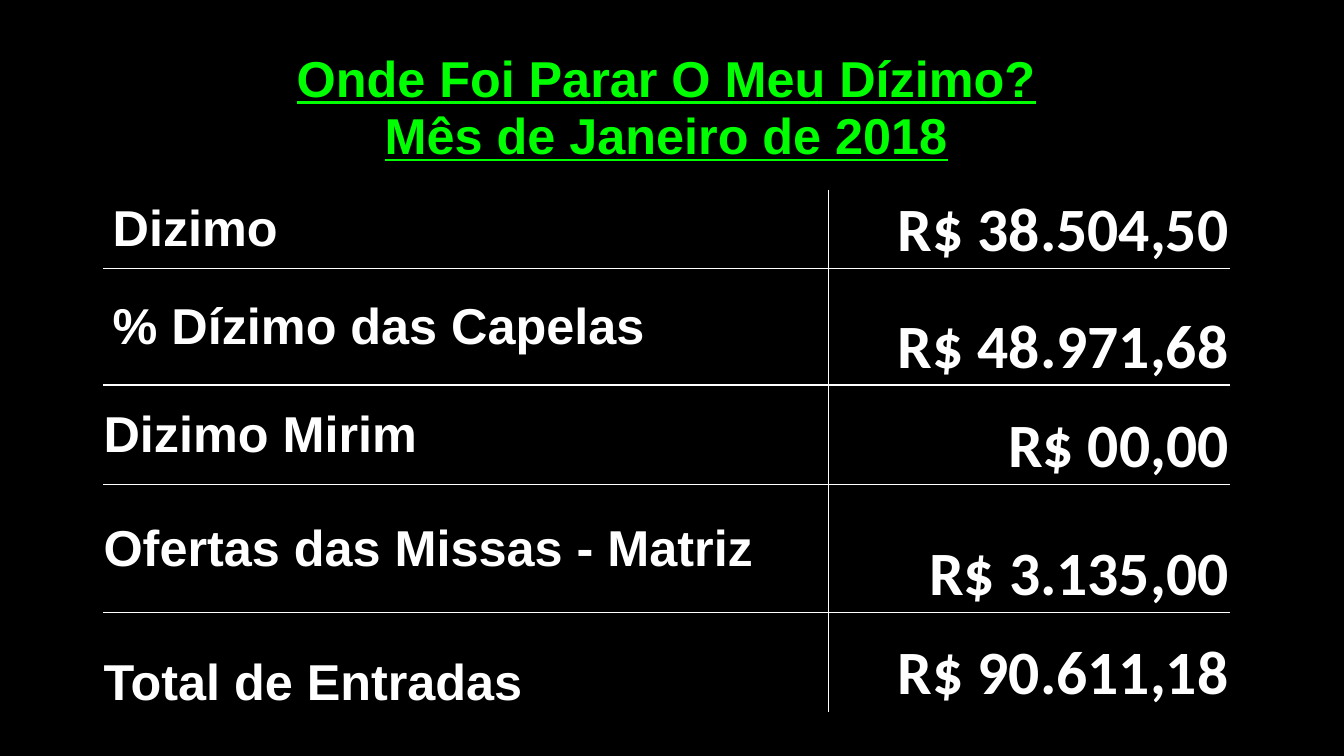
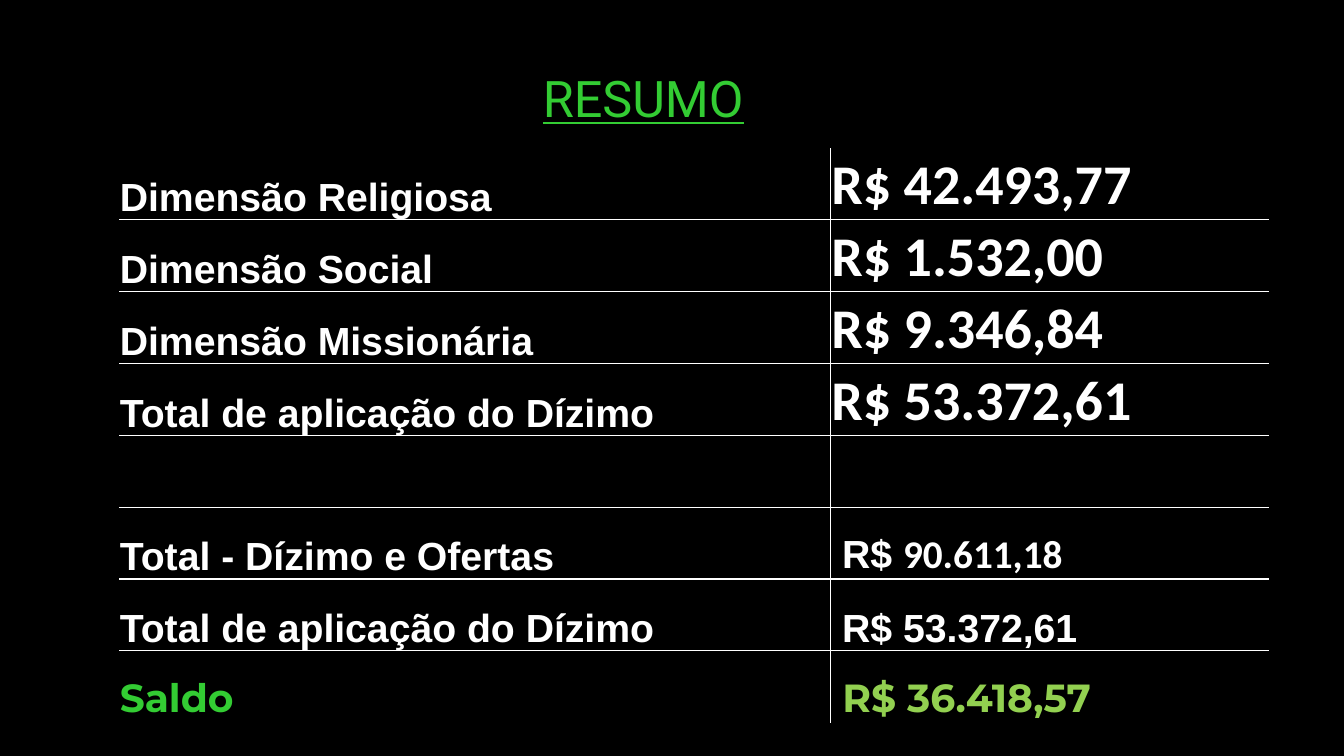
import pptx
import pptx.util
import pptx.dml.color
import pptx.enum.text
from lxml import etree
import pptx.oxml.ns

Cm, Pt = pptx.util.Cm, pptx.util.Pt
ALIGN = pptx.enum.text.PP_ALIGN
ANCHOR = pptx.enum.text.MSO_ANCHOR

# Shared colours and text formats
BLACK, WHITE = "000000", "FFFFFF"
LIME, GREEN, OLIVE = "00FF00", "33CC33", "92D050"
THIN, PAD = 0.02, 0.25


def style(size, name, hue=WHITE, bold=True, underline=False):
    return {"size": Pt(size), "name": name, "color": hue,
            "bold": bold, "underline": underline}


HEAD = style(36, "Arial", LIME, underline=True)
LABEL = style(36, "Arial")
MONEY = style(44, "Calibri")
ITEM = style(28, "Arial")
SUM = style(40, "Calibri")


def paint(target, hue):
    """Give a fill or a font colour from a hex string."""
    target.rgb = pptx.dml.color.RGBColor.from_string(hue)


def write(para, text, form):
    run = para.add_run()
    run.text = text
    for key, value in form.items():
        if key == "color":
            paint(run.font.color, value)
        else:
            setattr(run.font, key, value)


# Slide parts
def add_title(slide, text, box, form):
    title = slide.shapes.title
    for key, value in zip(("left", "top", "width", "height"), box):
        setattr(title, key, Cm(value))
    frame = title.text_frame
    frame.word_wrap = True
    frame.auto_size = pptx.enum.text.MSO_AUTO_SIZE.NONE
    frame.vertical_anchor = ANCHOR.TOP
    para = frame.paragraphs[0]
    para.alignment = ALIGN.CENTER
    write(para, text, form)


def add_edge(cell, side, shown):
    """Draw one cell border, or switch it off."""
    props = cell._tc.get_or_add_tcPr()
    line = etree.SubElement(props, pptx.oxml.ns.qn("a:ln" + side), w=str(Pt(1)))
    if shown:
        fill = etree.SubElement(line, pptx.oxml.ns.qn("a:solidFill"))
        etree.SubElement(fill, pptx.oxml.ns.qn("a:srgbClr"), val=WHITE)
    else:
        etree.SubElement(line, pptx.oxml.ns.qn("a:noFill"))


def fill_cell(cell, runs, left=THIN, anchor=ANCHOR.BOTTOM, align=ALIGN.LEFT):
    look = {"margin_left": Cm(left), "margin_top": Cm(THIN),
            "margin_right": Cm(THIN), "margin_bottom": 0,
            "vertical_anchor": anchor}
    for key, value in look.items():
        setattr(cell, key, value)
    para = cell.text_frame.paragraphs[0]
    para.alignment = align
    for text, form in runs:
        write(para, text, form)


def add_grid(slide, left, top, widths, heights, rows, ruled=True):
    """Add a table that has inner rules at most."""
    shape = slide.shapes.add_table(
        len(rows), len(widths), Cm(left), Cm(top),
        Cm(sum(widths)), Cm(sum(heights)))
    table = shape.table
    table.first_row = table.horz_banding = False
    for col, width in zip(table.columns, widths):
        col.width = Cm(width)
    for r, row in enumerate(rows):
        table.rows[r].height = Cm(heights[r])
        for c, spec in enumerate(row):
            cell = table.cell(r, c)
            edges = {"L": c > 0, "R": c < len(widths) - 1,
                     "T": r > 0, "B": r < len(rows) - 1}
            for side, inner in edges.items():
                add_edge(cell, side, ruled and inner)
            cell.fill.background()
            fill_cell(cell, **spec)


def entry(text, form, **look):
    return {"runs": [(text, form)], **look}


# Slides
def add_income(slide):
    mid, low = ANCHOR.MIDDLE, ANCHOR.BOTTOM
    data = [("Dizimo", "R$ 38.504,50", PAD, mid),
            ("% Dízimo das Capelas", "R$ 48.971,68", PAD, mid),
            ("Dizimo Mirim", "R$ 00,00", THIN, mid),
            ("Ofertas das Missas - Matriz", "R$ 3.135,00", THIN, mid),
            ("Total de Entradas", "R$ 90.611,18", THIN, low)]
    rows = [(entry(name, LABEL, left=left, anchor=anchor),
             entry(value, MONEY, align=ALIGN.RIGHT))
            for name, value, left, anchor in data]
    add_grid(slide, 2.59, 4.78, (18.29, 10.11),
             (1.98, 2.94, 2.5, 3.23, 2.5), rows)
    lines = ["Onde Foi Parar O Meu Dízimo?", "Mês de Janeiro de 2018"]
    add_grid(slide, 6.12, 1.12, (21.34,), (1.6, 0.61),
             [(entry(line, HEAD, align=ALIGN.CENTER),) for line in lines],
             ruled=False)


def add_summary(slide):
    costs = [("Dimensão Religiosa", "R$ 42.493,77"),
             ("Dimensão Social", "R$ 1.532,00"),
             ("Dimensão Missionária", "R$ 9.346,84"),
             ("Total de aplicação do Dízimo", "R$ 53.372,61")]
    rows = [(entry(name, ITEM), entry(value, SUM)) for name, value in costs]
    rows += [
        ({"runs": []}, {"runs": []}),
        (entry("Total - Dízimo e Ofertas", ITEM),
         {"runs": [(" R$ ", ITEM), ("90.611,18", style(28, "Calibri"))]}),
        (entry("Total de aplicação do Dízimo", ITEM),
         entry(" R$ 53.372,61", ITEM)),
        (entry("Saldo", style(28, "Montserrat", GREEN)),
         entry(" R$ 36.418,57", style(28, "Montserrat", OLIVE)))]
    add_grid(slide, 3, 3.73, (17.93, 11.05), [1.81] * len(rows), rows)
    add_title(slide, "RESUMO", (7.32, 1.57, 17.78, 1.8),
              style(36, "Roboto", GREEN, bold=False, underline=True))


def main():
    deck = pptx.Presentation()
    deck.slide_width, deck.slide_height = Cm(33.87), Cm(19.05)
    back = deck.slide_master.background.fill
    back.solid()
    paint(back.fore_color, BLACK)
    for build, layout in ((add_income, 6), (add_summary, 5)):
        build(deck.slides.add_slide(deck.slide_layouts[layout]))
    deck.save("out.pptx")


if __name__ == "__main__":
    main()
